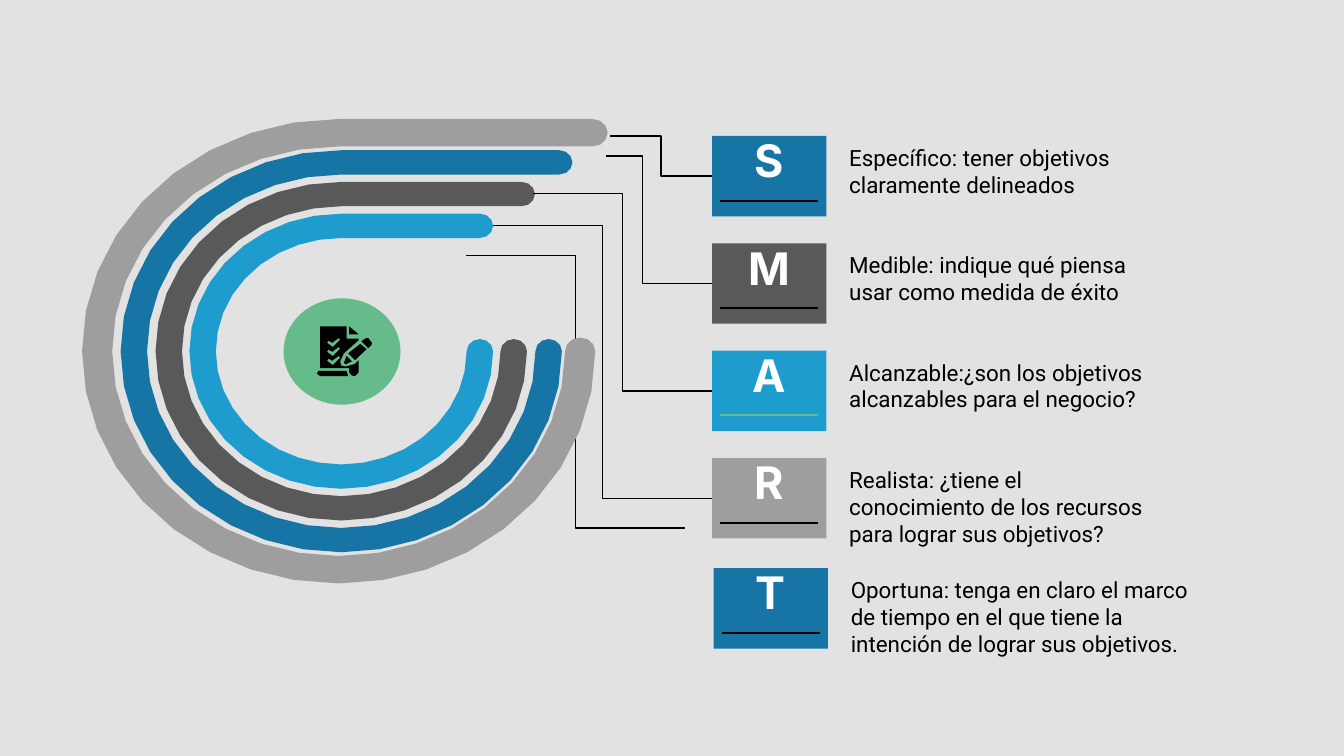
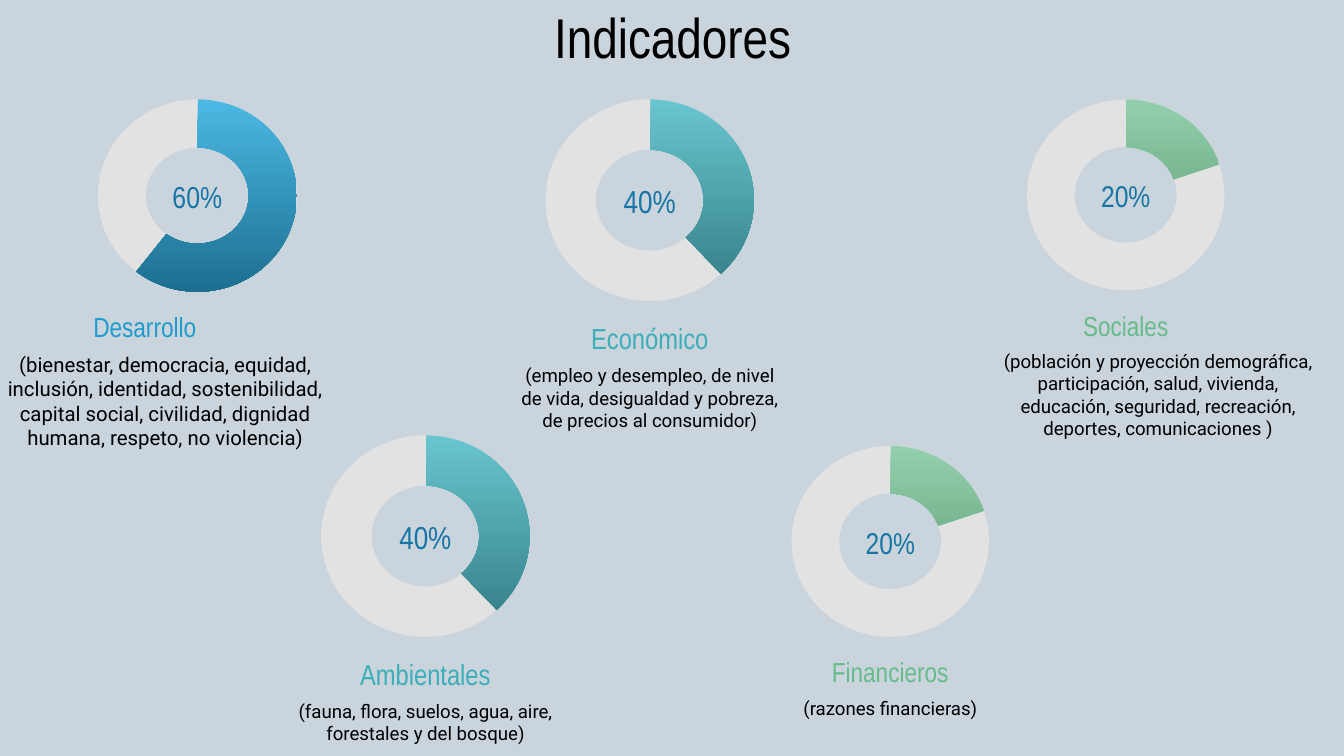
from dataclasses import dataclass
from math import cos, radians, sin

from lxml.etree import SubElement
from pptx import Presentation
from pptx.dml.color import RGBColor
from pptx.enum.shapes import MSO_CONNECTOR as Connector, MSO_SHAPE as Preset
from pptx.enum.text import MSO_ANCHOR as Anchor, PP_ALIGN as Align
from pptx.oxml.ns import qn
from pptx.util import Cm, Pt

COLORS = {
    "fog": "E2E2E2", "mist": "C9D4DC", "gray": "9E9E9E", "charcoal": "595959",
    "blue": "1775A6", "sky": "1F9CCE", "teal": "3BAEBA", "green": "66BB8A",
    "black": "000000", "white": "FFFFFF",
    "sky top": "4BB9E4", "sky bottom": "1D6F90",
    "teal top": "68C5CF", "teal bottom": "327B83",
    "green top": "94CFAD", "green bottom": "4D946A",
}
BODY_FONT, LETTER_FONT, TITLE_FONT = "Roboto", "Inter", "Arial Narrow"

Point = tuple[float, float]


@dataclass(frozen=True)
class Band:
    """A C-shaped stripe: an open elliptical ring with a straight bar on top."""
    color: str
    radius_x: float
    radius_y: float
    bar_end: float
    center_x: float = 6.45
    thick_x: float = 0.5
    thick_y: float = 0.46


@dataclass(frozen=True)
class Card:
    letter: str
    color: str
    left: float
    top: float
    text: str
    text_width: float
    link_end: Point
    link_start: Point | None = None
    bend: float = 0.5
    rule: str = "black"


@dataclass(frozen=True)
class Indicator:
    name: str
    percent: str
    detail: str
    color: str
    left: float
    top: float
    width: float
    arc_start: float
    detail_width: float
    detail_shift: float = 0
    detail_size: float = 10
    name_align: Align = Align.CENTER


BAND_CENTER_Y = 6.64
RING_STEP, CAP_STEP = 10, 30
BANDS = [
    Band("sky", 2.87, 2.6, 9.07),
    Band("charcoal", 3.51, 3.2, 9.86),
    Band("blue", 4.17, 3.8, 10.57),
]
OUTER_BAND = Band("gray", 4.85, 4.39, 11.2, 6.4, 0.57, 0.52)

CARD_LEFT, CARD_TOP, CARD_STEP = 13.46, 2.57, 2.03
CARD_WIDTH, CARD_HEIGHT = 2.16, 1.52
CARDS = [
    Card("S", "blue", CARD_LEFT, CARD_TOP,
         "Específico: tener objetivos claramente delineados", 6.76, (11.53, 2.57)),
    Card("M", "charcoal", CARD_LEFT, CARD_TOP + CARD_STEP,
         "Medible: indique qué piensa usar como medida de éxito", 6.43, (11.46, 2.95),
         bend=0.66),
    Card("A", "sky", CARD_LEFT, CARD_TOP + 2 * CARD_STEP,
         "Alcanzable:¿son los objetivos alcanzables para el negocio?", 6.43, (10.08, 3.66),
         rule="green"),
    Card("R", "gray", CARD_LEFT, CARD_TOP + 3 * CARD_STEP,
         "Realista: ¿tiene el conocimiento de los recursos para lograr sus objetivos?",
         6.43, (9.32, 4.27)),
    Card("T", "blue", 13.49, 10.74,
         "Oportuna: tenga en claro el marco de tiempo en el que tiene la intención "
         "de lograr sus objetivos.", 7.16, (8.81, 4.83), link_start=(12.95, 9.98)),
]

TICK = [(6.4, 6.39), (6.43, 6.42), (6.29, 6.56), (6.18, 6.48), (6.21, 6.44), (6.28, 6.48)]
PAGE = [(6.05, 6.17), (6.05, 6.96), (6.6, 6.96), (6.6, 7.04), (6.65, 7.1), (6.71, 7.11),
        (6.78, 7.04), (6.78, 6.81), (6.71, 6.88), (6.53, 6.93), (6.45, 6.91), (6.43, 6.83),
        (6.5, 6.68), (6.78, 6.43), (6.78, 6.4), (6.55, 6.4), (6.55, 6.17)]
CHECKLIST = [PAGE] + [[(x, y + row * 0.17) for x, y in TICK] for row in range(3)]
ERASER = [(6.92, 6.39), (6.83, 6.45), (6.96, 6.58), (7.02, 6.53), (7.03, 6.48), (6.96, 6.39)]
PENCIL = [(6.81, 6.5), (6.58, 6.68), (6.71, 6.81), (6.93, 6.6)]
PENCIL_TIP = [(6.55, 6.73), (6.5, 6.86), (6.53, 6.89), (6.65, 6.83)]
FOLD = [(6.6, 6.17), (6.6, 6.32), (6.78, 6.32)]
SCROLL = [(6.02, 7.01), (5.99, 7.06), (6.05, 7.11), (6.58, 7.11), (6.55, 7.01)]

RING_WIDTH, RING_HEIGHT = 3.94, 3.81
ARC_END, ARC_THICKNESS = 161.79, 0.25
INDICATORS = [
    Indicator("Económico", "40%",
              "(empleo y desempleo, de nivel de vida, desigualdad y pobreza, "
              "de precios al consumidor)", "teal", 10.31, 1.88, 3.94, 80.44, 5.41),
    Indicator("Desarrollo", "60%",
              "(bienestar, democracia, equidad, inclusión, identidad, sostenibilidad, "
              "capital social, civilidad, dignidad humana, respeto, no violencia)",
              "sky", 1.85, 1.88, 3.76, 30.8, 6.4, -0.61, 10.9, Align.LEFT),
    Indicator("Sociales", "20%",
              "(población y proyección demográfica, participación, salud, vivienda, "
              "educación, seguridad, recreación, deportes, comunicaciones )",
              "green", 19.41, 1.88, 3.73, 118.88, 6.4, 0.61),
    Indicator("Ambientales", "40%",
              "(fauna, flora, suelos, agua, aire, forestales y del bosque)",
              "teal", 6.07, 8.23, 3.94, 80.44, 5.41),
    Indicator("Financieros", "20%", "(razones financieras)",
              "green", 14.96, 8.43, 3.73, 118.88, 5.13),
]


def rgb(name: str) -> RGBColor:
    return RGBColor.from_string(COLORS[name])


def add_slide(presentation, background: str):
    slide = presentation.slides.add_slide(presentation.slide_layouts[6])
    slide.background.fill.solid()
    slide.background.fill.fore_color.rgb = rgb(background)
    return slide


def write(shape, text: str, font: str, size: float, color: str, align=Align.LEFT,
          anchor=Anchor.TOP, insets=(0.25, 0.25, 0.25, 0.25), bold: bool = False) -> None:
    """Fill a shape with one paragraph; insets go left, top, right, bottom."""
    frame = shape.text_frame
    frame.word_wrap = True
    frame.vertical_anchor = anchor
    (frame.margin_left, frame.margin_top,
     frame.margin_right, frame.margin_bottom) = map(Cm, insets)
    frame.text = text
    paragraph = frame.paragraphs[0]
    paragraph.alignment = align
    run_font = paragraph.runs[0].font
    run_font.name, run_font.size, run_font.bold = font, Pt(size), bold
    run_font.color.rgb = rgb(color)


def add_text(shapes, box: tuple[float, float, float, float], text: str, *style, **options):
    write(shapes.add_textbox(*map(Cm, box)), text, *style, **options)


def add_preset(shapes, preset: Preset, box: tuple[float, float, float, float], color: str):
    shape = shapes.add_shape(preset, *map(Cm, box))
    plain_fill(shape, color)
    return shape


def plain_fill(shape, color: str) -> None:
    shape.shadow.inherit = False
    shape.fill.solid()
    shape.fill.fore_color.rgb = rgb(color)
    shape.line.fill.background()


def add_outline(shapes, contours: list[list[Point]], color: str) -> None:
    """Draw closed contours as one freeform; inner contours become holes."""
    builder = None
    for contour in contours:
        points = [(Cm(x), Cm(y)) for x, y in contour]
        if builder is None:
            builder = shapes.build_freeform(*points[0], scale=1.0)
        else:
            builder.move_to(*points[0])
        builder.add_line_segments(points[1:], close=True)
    plain_fill(builder.convert_to_shape(), color)


def add_line(shapes, kind: Connector, start: Point, end: Point, color: str,
             width: float, bend: float = 0.5) -> None:
    connector = shapes.add_connector(kind, *map(Cm, (*start, *end)))
    connector.line.color.rgb = rgb(color)
    connector.line.width = Pt(width)
    properties = connector._element.spPr
    SubElement(properties, qn("a:effectLst"))
    if bend != 0.5:
        geometry = properties.find(qn("a:prstGeom"))
        guides = geometry.find(qn("a:avLst"))
        if guides is None:
            guides = SubElement(geometry, qn("a:avLst"))
        SubElement(guides, qn("a:gd"), name="adj1", fmla=f"val {round(bend * 100000)}")


def arc(center: Point, radius_x: float, radius_y: float, start: int, end: int,
        step: int) -> list[Point]:
    """Points on an ellipse; degrees run clockwise from three o'clock."""
    stride = step if end > start else -step
    return [(center[0] + radius_x * cos(radians(angle)),
             center[1] + radius_y * sin(radians(angle)))
            for angle in range(start, end + stride, stride)]


def add_band(shapes, band: Band) -> None:
    center = (band.center_x, BAND_CENTER_Y)
    cap_x, cap_y = band.thick_x / 2, band.thick_y / 2
    ring_cap = (band.center_x + band.radius_x - cap_x, BAND_CENTER_Y)
    bar_cap = (band.bar_end, BAND_CENTER_Y - band.radius_y + cap_y)
    outline = (
        arc(center, band.radius_x - band.thick_x, band.radius_y - band.thick_y,
            0, 270, RING_STEP)
        + arc(bar_cap, cap_x, cap_y, 90, -90, CAP_STEP)
        + arc(center, band.radius_x, band.radius_y, 270, 0, RING_STEP)
        + arc(ring_cap, cap_x, cap_y, 360, 180, CAP_STEP)
    )
    add_outline(shapes, [outline], band.color)


def add_card(shapes, card: Card) -> None:
    tile = add_preset(shapes, Preset.RECTANGLE,
                      (card.left, card.top, CARD_WIDTH, CARD_HEIGHT), card.color)
    write(tile, card.letter, LETTER_FONT, 24, "white", Align.CENTER, Anchor.BOTTOM,
          (0.25, 0.25, 0.25, 0.56), bold=True)
    add_text(shapes, (card.left + 2.34, card.top, card.text_width, CARD_HEIGHT), card.text,
             BODY_FONT, 12, "black", insets=(0.25, 0.15, 0.25, 0.25))
    rule_y = card.top + 1.22
    add_line(shapes, Connector.STRAIGHT, (card.left + 2, rule_y),
             (card.left + 0.15, rule_y), card.rule, 1.07)
    start = card.link_start or (card.left, card.top + CARD_HEIGHT / 2)
    add_line(shapes, Connector.ELBOW, start, card.link_end, "black", 0.75, card.bend)


def add_indicator(slide, item: Indicator) -> None:
    shapes = slide.shapes.add_group_shape().shapes
    scale = item.width / RING_WIDTH
    center = item.left + item.width / 2
    insets = (0.2 * scale,) * 4

    def centered(offset: float, width: float, height: float):
        return (center - width * scale / 2, item.top + offset * scale,
                width * scale, height * scale)

    add_text(shapes, centered(4.24, 4.52, 0.53), item.name, TITLE_FONT,
             round(15.5 * scale, 1), item.color, item.name_align, Anchor.MIDDLE, insets)
    detail_left = center + item.detail_shift - item.detail_width / 2
    add_text(shapes, (detail_left, item.top + 4.8 * scale, item.detail_width, 1.65 * scale),
             item.detail, BODY_FONT, item.detail_size, "black", Align.CENTER, insets=insets)

    ring = centered(0, RING_WIDTH, RING_HEIGHT)
    add_preset(shapes, Preset.DONUT, ring, "fog")
    share = add_preset(shapes, Preset.BLOCK_ARC, ring, item.color)
    for index, value in enumerate((item.arc_start, ARC_END, ARC_THICKNESS)):
        share.adjustments[index] = value
    share._element.spPr.find(qn("a:xfrm")).set("flipH", "1")
    share.fill.gradient()
    share.fill.gradient_angle = 270
    for stop, end, position in zip(share.fill.gradient_stops, ("top", "bottom"), (0, 1)):
        stop.color.rgb = rgb(f"{item.color} {end}")
        stop.position = position

    add_text(shapes, centered(1.45, 2.01, 0.94), item.percent, TITLE_FONT,
             round(17 * scale, 1), "blue", Align.CENTER, Anchor.MIDDLE, insets)


def build_smart_slide(presentation) -> None:
    slide = add_slide(presentation, "fog")
    for band in BANDS:
        add_band(slide.shapes, band)
    add_preset(slide.shapes, Preset.OVAL, (5.36, 5.64, 2.21, 2.01), "green")
    icon = slide.shapes.add_group_shape().shapes
    add_outline(icon, CHECKLIST, "black")
    for part in (ERASER, PENCIL_TIP, PENCIL, FOLD, SCROLL):
        add_outline(icon, [part], "black")
    for card in CARDS:
        add_card(slide.shapes, card)
    add_band(slide.shapes, OUTER_BAND)


def build_indicators_slide(presentation) -> None:
    slide = add_slide(presentation, "mist")
    add_text(slide.shapes, (6.91, 0.08, 11.61, 1.22), "Indicadores", TITLE_FONT, 30, "black",
             Align.CENTER, Anchor.MIDDLE)
    for item in INDICATORS:
        add_indicator(slide, item)


def main() -> None:
    presentation = Presentation()
    presentation.slide_width, presentation.slide_height = Cm(25.4), Cm(14.29)
    build_smart_slide(presentation)
    build_indicators_slide(presentation)
    presentation.save("out.pptx")


if __name__ == "__main__":
    main()
